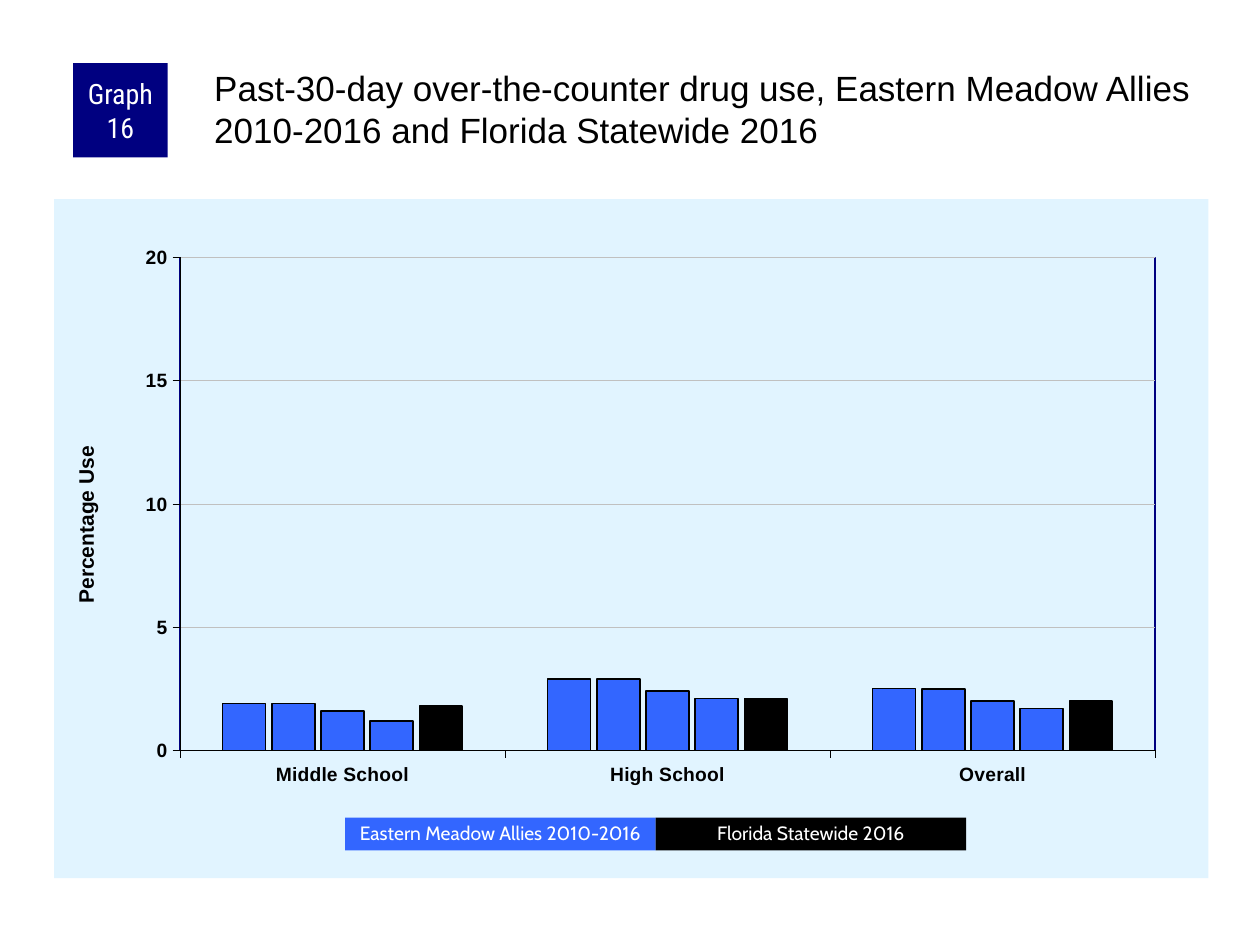
from pptx import Presentation
from pptx.chart.data import CategoryChartData
from pptx.dml.color import RGBColor
from pptx.enum.chart import XL_CHART_TYPE, XL_TICK_MARK
from pptx.enum.shapes import MSO_SHAPE
from pptx.enum.text import MSO_ANCHOR, PP_ALIGN
from pptx.oxml import parse_xml
from pptx.oxml.ns import nsdecls
from pptx.util import Pt

NAVY = RGBColor(0x00, 0x00, 0x80)
BLUE = RGBColor(0x33, 0x66, 0xFF)
PALE = RGBColor(0xE1, 0xF4, 0xFF)
GREY = RGBColor(0xC0, 0xC0, 0xC0)
BLACK = RGBColor(0, 0, 0)
WHITE = RGBColor(255, 255, 255)
LOCAL = "Eastern Meadow Allies 2010-2016"
STATE = "Florida Statewide 2016"


def style(font, size, color, name="Arial", bold=False):
    for key, val in dict(size=Pt(size), name=name, bold=bold).items():
        setattr(font, key, val)
    font.color.rgb = color


def layout(**parts):
    """Make a manual chart layout from fractions of the chart's size."""
    inner = '<c:layoutTarget val="inner"/>' if "w" in parts else ""
    modes = "".join(f'<c:{k}Mode val="edge"/>' for k in "xy")
    sizes = "".join(f'<c:{k} val="{v}"/>' for k, v in parts.items())
    return parse_xml(f'<c:layout {nsdecls("c")}><c:manualLayout>{inner}{modes}{sizes}'
                     '</c:manualLayout></c:layout>')


prs = Presentation()
prs.slide_width, prs.slide_height = Pt(720), Pt(540)
slide = prs.slides.add_slide(prs.slide_layouts[6])
shapes = slide.shapes

# Chart
data = CategoryChartData()
data.categories = ["Middle School", "High School", "Overall"]
rows = [(1.9, 2.9, 2.5), (1.9, 2.9, 2.5), (1.6, 2.4, 2), (1.2, 2.1, 1.7), (1.8, 2.1, 2)]
for num, row in enumerate(rows, 1):
    data.add_series(f"Series {num}", row)
chart = shapes.add_chart(XL_CHART_TYPE.COLUMN_CLUSTERED, Pt(30.96), Pt(113.76),
                         Pt(659.52), Pt(388.08), data).chart
chart.has_legend = chart.has_title = False
style(chart.font, 8, BLACK)

plot = chart.plots[0]
plot.gap_width, plot.overlap, plot.vary_by_categories = 200, -15, False
for num, bar in enumerate(plot.series):
    bar.format.fill.solid()
    bar.format.fill.fore_color.rgb = BLACK if num == 4 else BLUE
    bar.format.line.color.rgb = BLACK
    bar.format.line.width = Pt(1 if num else 0.75)

cat, val = chart.category_axis, chart.value_axis
for axis in (cat, val):
    style(axis.tick_labels.font, 11, BLACK, bold=True)
    axis.major_tick_mark = XL_TICK_MARK.OUTSIDE
    axis.minor_tick_mark = XL_TICK_MARK.NONE
    axis.format.line.color.rgb = BLACK
    axis.format.line.width = Pt(0.25)
for key, num in dict(minimum_scale=0, maximum_scale=20, major_unit=5).items():
    setattr(val, key, num)
val.has_major_gridlines = True
grid = val.major_gridlines.format.line
grid.color.rgb, grid.width = GREY, Pt(0.25)

frame = val.axis_title.text_frame
frame.text = "Percentage Use"
style(frame.paragraphs[0].runs[0].font, 12, BLACK, bold=True)

# Chart parts that need XML: title turn and place, plot place, fills and border
root = chart.element
title = root.xpath(".//c:valAx/c:title")[0]
area = root.xpath(".//c:plotArea")[0]
for part in (title, area):
    for old in part.xpath("./c:layout"):
        part.remove(old)
turn = title.xpath(".//a:bodyPr")[0]
turn.set("rot", "-5400000")
turn.set("vert", "horz")
title.xpath("./c:tx")[0].addnext(layout(x=0.013, y=0.358))
area.insert(0, layout(x=0.109, y=0.086, w=0.845, h=0.726))
area.append(parse_xml(
    f'<c:spPr {nsdecls("c", "a")}><a:noFill/><a:ln w="{Pt(1)}"><a:solidFill>'
    f'<a:srgbClr val="{NAVY}"/></a:solidFill></a:ln></c:spPr>'))
root.xpath("./c:chart")[0].addnext(parse_xml(
    f'<c:spPr {nsdecls("c", "a")}><a:solidFill><a:srgbClr val="{PALE}"/></a:solidFill>'
    '<a:ln><a:noFill/></a:ln></c:spPr>'))

# Number badge and legend keys
boxes = [
    ("Graph 16", 41.76, 36, 54, 54, NAVY, 16, "Roboto Condensed", 1, 3.6, 0),
    (LOCAL, 197.28, 467.28, 177.4, 18.72, BLUE, 11, "Cabin", 0.9, 7.2, 3.6),
    (STATE, 374.68, 467.28, 177.4, 18.72, BLACK, 11, "Cabin", 0.9, 7.2, 3.6),
]
for text, left, top, wide, high, fill, size, face, space, side, edge in boxes:
    box = shapes.add_shape(MSO_SHAPE.RECTANGLE, Pt(left), Pt(top), Pt(wide), Pt(high))
    box.shadow.inherit = False
    box.fill.solid()
    box.fill.fore_color.rgb = fill
    box.line.fill.background()
    frame = box.text_frame
    frame.text = text
    frame.word_wrap = True
    frame.vertical_anchor = MSO_ANCHOR.MIDDLE
    frame.margin_left = frame.margin_right = Pt(side)
    frame.margin_top = frame.margin_bottom = Pt(edge)
    para = frame.paragraphs[0]
    para.alignment, para.line_spacing = PP_ALIGN.CENTER, space
    style(para.runs[0].font, size, WHITE, face)

# Heading
frame = shapes.add_textbox(Pt(120.24), Pt(36), Pt(570.24), Pt(59.76)).text_frame
frame.word_wrap = True
frame.margin_left = frame.margin_top = Pt(2.16)
frame.margin_right = frame.margin_bottom = 0
frame.text = f"Past-30-day over-the-counter drug use, {LOCAL} and {STATE}"
style(frame.paragraphs[0].runs[0].font, 20, BLACK)

prs.save("out.pptx")
